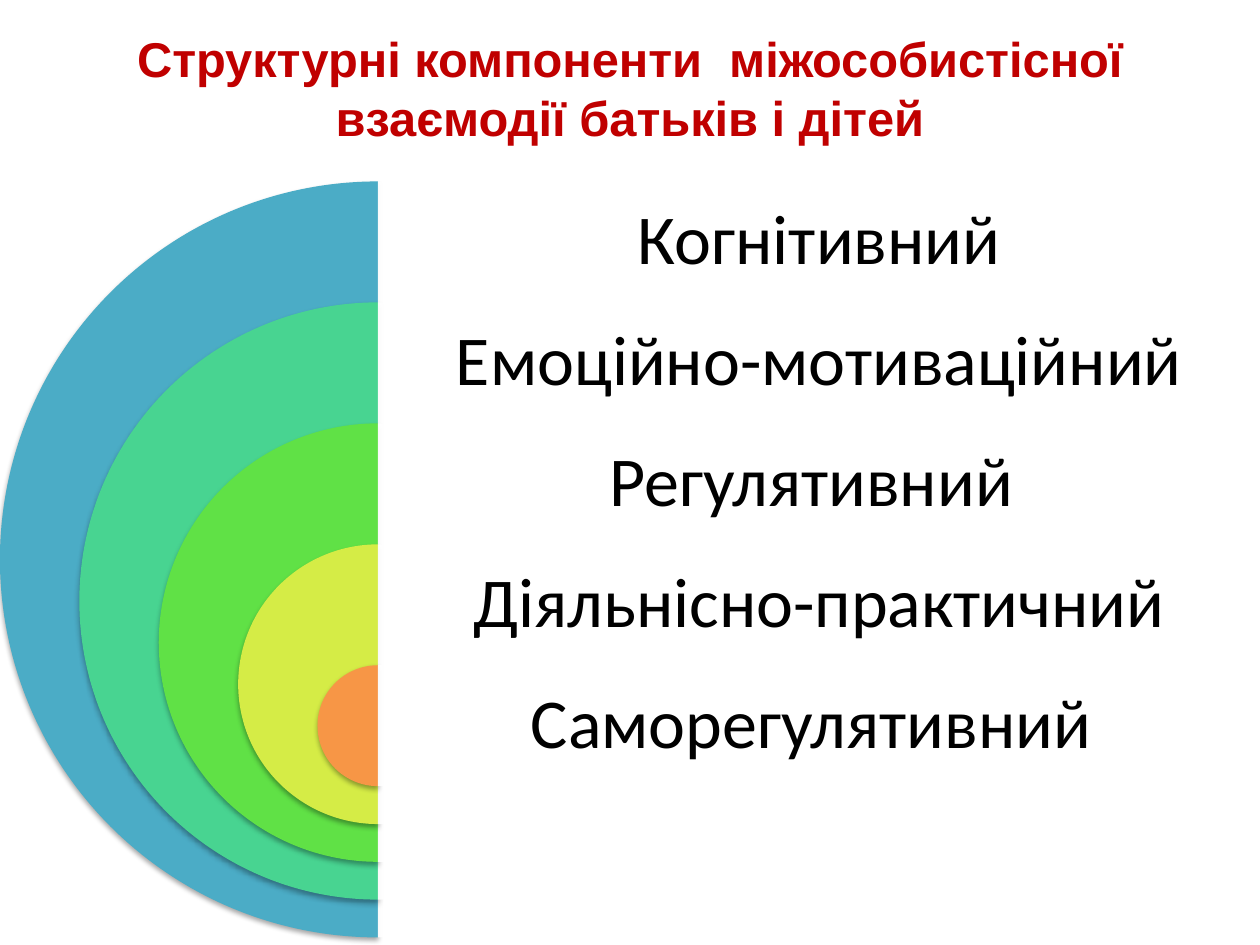
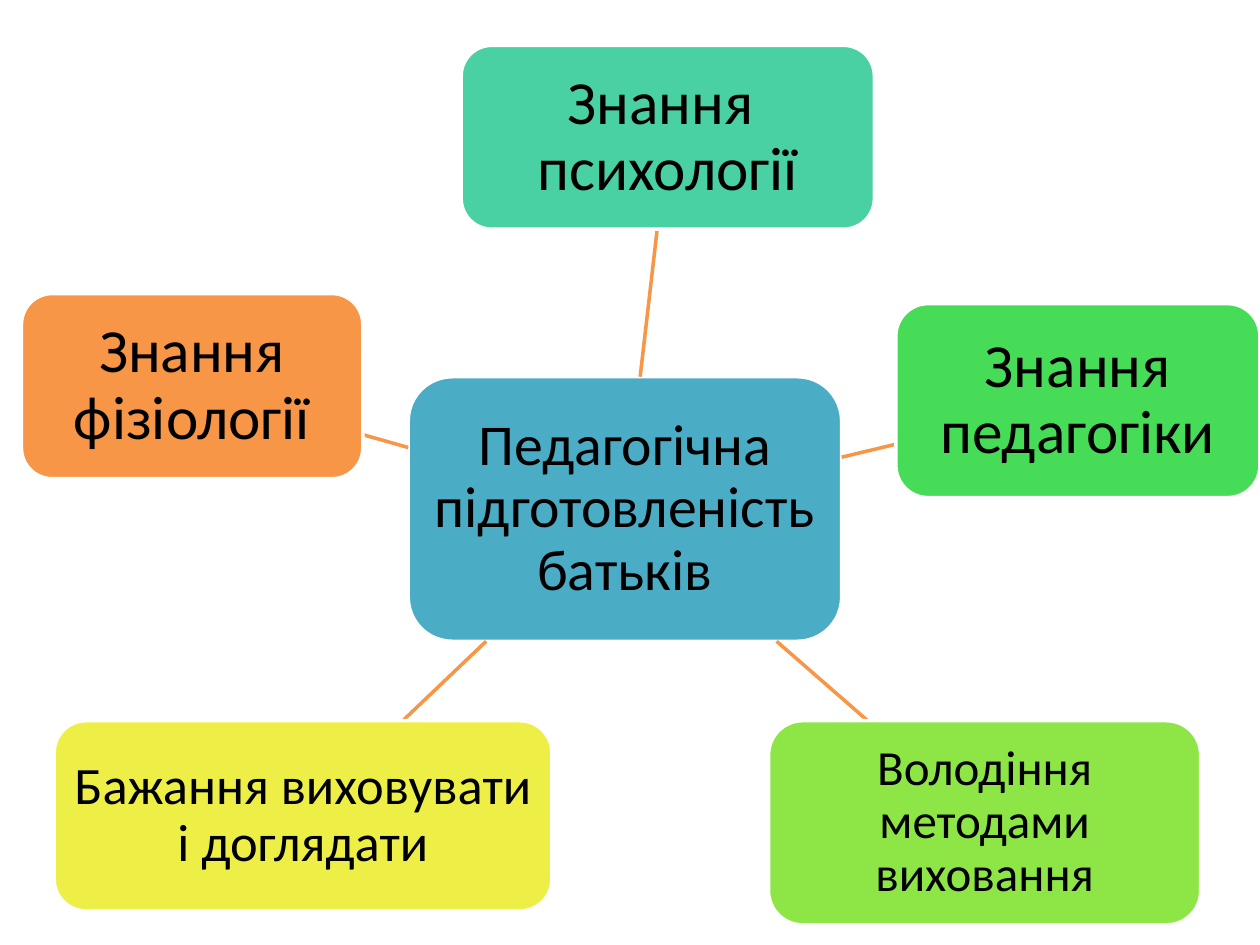
from pptx import Presentation
from pptx.dml.color import RGBColor
from pptx.enum.shapes import MSO_CONNECTOR as Connector, MSO_SHAPE as Shape
from pptx.enum.text import MSO_ANCHOR as Anchor, PP_ALIGN as Align
from pptx.oxml import parse_xml
from pptx.oxml.ns import nsdecls
from pptx.util import Inches, Pt

TITLE = "Структурні компоненти  міжособистісної взаємодії батьків і дітей"
COMPONENTS = [
    ("Когнітивний", "4BACC6"),
    ("Емоційно-мотиваційний", "48D491"),
    ("Регулятивний ", "60E146"),
    ("Діяльнісно-практичний", "D5EC46"),
    ("Саморегулятивний ", "F79646"),
]
HUB = ("Педагогічна підготовленість батьків", (3.24, 2.99, 3.44, 2.1), "4BACC6", 33)
SKILLS = [
    ("Знання  психології", (3.66, 0.36, 3.28, 1.46), "49D1A3", 35),
    ("Знання педагогіки", (7.11, 2.41, 2.89, 1.54), "47DC57", 35),
    ("Володіння методами виховання", (6.1, 5.72, 3.43, 1.62), "8DE646", 28),
    ("Бажання виховувати і доглядати", (0.43, 5.72, 3.95, 1.51), "EEEF46", 30),
    ("Знання фізіології", (0.17, 2.33, 2.71, 1.47), "F79646", 35),
]
BLACK, WHITE, RED, ORANGE = "000000", "FFFFFF", "C00000", "F79646"
RING_CENTRE, RING_TOP, RING_SIZE = 3, 1.44, 6
BAND, SHRINK, PANEL_WIDTH = 0.96, 1.26, 7
SHADOW = (
    f'<a:effectLst {nsdecls("a")}><a:outerShdw blurRad="{Pt(3.1)}" dist="{Pt(1.8)}" '
    'dir="5400000" rotWithShape="0"><a:srgbClr val="000000"><a:alpha val="35000"/>'
    "</a:srgbClr></a:outerShdw></a:effectLst>"
)


def colour(target, value):
    """Give a colour format the colour of a hex string."""
    target.rgb = RGBColor.from_string(value)


def apply(target, values):
    """Set attributes from a dict."""
    for name, value in values.items():
        setattr(target, name, value)


def write(shape, text, size, margin=0.0, font="Calibri", ink=BLACK, bold=False, spacing=0.9):
    """Write one centred paragraph into a shape."""
    frame = shape.text_frame
    sides = ("left", "top", "right", "bottom")
    apply(frame, {f"margin_{side}": Inches(margin) for side in sides})
    apply(frame, {"word_wrap": True, "vertical_anchor": Anchor.MIDDLE})
    paragraph = frame.paragraphs[0]
    apply(paragraph, {"alignment": Align.CENTER, "line_spacing": spacing})
    run = paragraph.add_run()
    run.text = text
    apply(run.font, {"name": font, "size": Pt(size), "bold": bold})
    colour(run.font.color, ink)


def add_filled(slide, kind, box, fill, outline=None):
    """Add a preset shape without shadow."""
    shape = slide.shapes.add_shape(kind, *map(Inches, box))
    shape.shadow.inherit = False
    shape.fill.solid()
    colour(shape.fill.fore_color, fill)
    if outline:
        shape.line.width = Pt(2)
        colour(shape.line.color, outline)
    else:
        shape.line.fill.background()
    return shape


def add_ring(slide, index, text, fill):
    """Add a half disc, its translucent panel and its label."""
    top = RING_TOP + index * BAND
    size = RING_SIZE - index * SHRINK
    ring = add_filled(slide, Shape.PIE, (RING_CENTRE - size / 2, top, size, size), fill)
    ring.adjustments[0], ring.adjustments[1] = 54, 162
    properties = ring.element.spPr
    properties.remove(properties.find("{*}effectLst"))
    properties.append(parse_xml(SHADOW))
    panel = add_filled(slide, Shape.RECTANGLE, (RING_CENTRE, top, PANEL_WIDTH, size), WHITE)
    panel_colour = panel.element.spPr.find("{*}solidFill")[0]
    panel_colour.append(parse_xml(f'<a:alpha {nsdecls("a")} val="90000"/>'))
    label = slide.shapes.add_textbox(*map(Inches, (RING_CENTRE, top, PANEL_WIDTH, BAND)))
    write(label, text, 40, margin=0.17)


def centre(box):
    """Return the middle of a box."""
    left, top, width, height = box
    return left + width / 2, top + height / 2


def edge_point(box, target):
    """Return where the line from the middle of a box to a target leaves the box."""
    x, y = centre(box)
    dx, dy = target[0] - x, target[1] - y
    share = min(size / 2 / abs(d) for size, d in zip(box[2:], (dx, dy)) if d)
    return x + dx * share, y + dy * share


def add_card(slide, text, box, fill, size):
    """Add a rounded card with its text."""
    write(add_filled(slide, Shape.ROUNDED_RECTANGLE, box, fill, WHITE), text, size)


def add_spoke(slide, hub, box):
    """Join two boxes along the line between their centres."""
    ends = edge_point(hub, centre(box)) + edge_point(box, centre(hub))
    spoke = slide.shapes.add_connector(Connector.STRAIGHT, *map(Inches, ends))
    spoke.line.width = Pt(2)
    colour(spoke.line.color, ORANGE)
    spoke.element.spPr.append(parse_xml(f'<a:effectLst {nsdecls("a")}/>'))


def build_components(presentation):
    """Build the slide of nested half discs."""
    slide = presentation.slides.add_slide(presentation.slide_layouts[5])
    title = slide.shapes.title
    box = dict(zip(("left", "top", "width", "height"), map(Inches, (0.5, 0.3, 9, 1.25))))
    apply(title, box)
    write(title, TITLE, 27.9, 0.05, "Arial", RED, True, 1.0)
    title.text_frame.margin_bottom = Inches(0.51)
    for index, (text, fill) in enumerate(COMPONENTS):
        add_ring(slide, index, text, fill)


def build_skills(presentation):
    """Build the slide of a hub and its cards."""
    slide = presentation.slides.add_slide(presentation.slide_layouts[6])
    add_card(slide, *HUB)
    for skill in SKILLS:
        add_spoke(slide, HUB[1], skill[1])
        add_card(slide, *skill)


def main():
    """Build and save the presentation."""
    presentation = Presentation()
    apply(presentation, {"slide_width": Inches(10), "slide_height": Inches(7.5)})
    build_components(presentation)
    build_skills(presentation)
    presentation.save("out.pptx")


if __name__ == "__main__":
    main()
